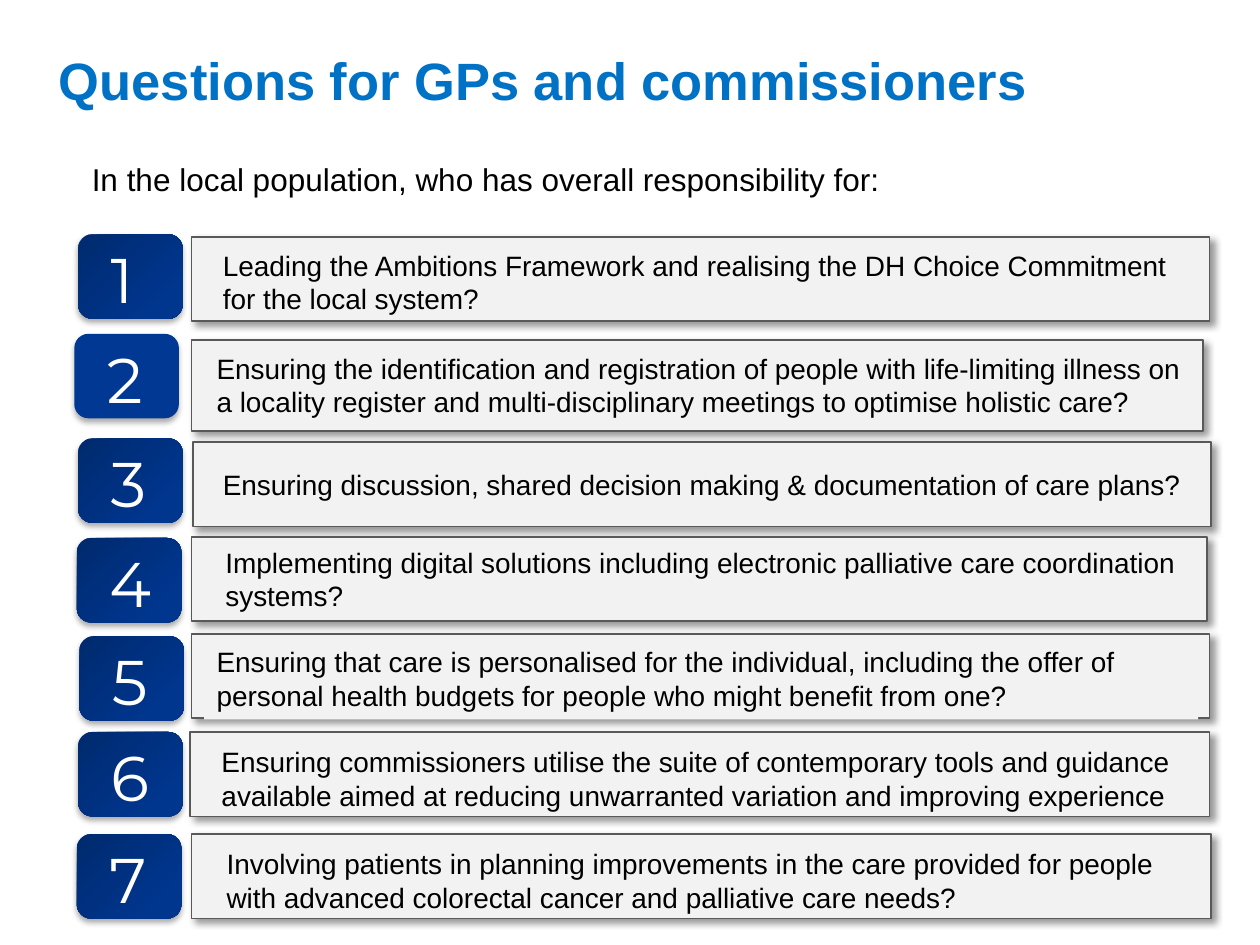
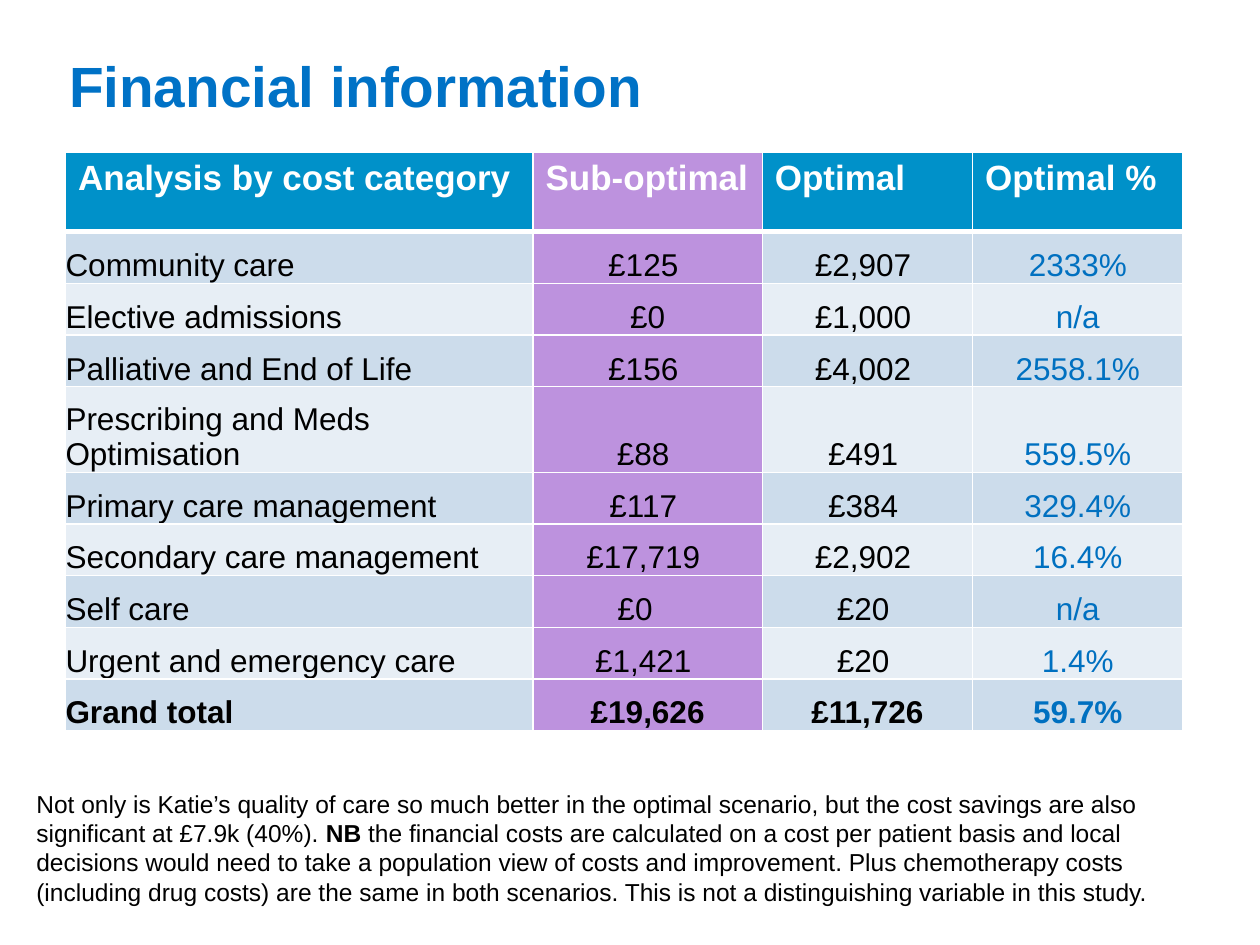
import pptx
import pptx.dml.color
import pptx.enum.shapes
import pptx.enum.text
import pptx.oxml
import pptx.oxml.ns
import pptx.util

Inches = pptx.util.Inches
Pt = pptx.util.Pt
RGBColor = pptx.dml.color.RGBColor
Shapes = pptx.enum.shapes.MSO_SHAPE
Anchor = pptx.enum.text.MSO_ANCHOR
Align = pptx.enum.text.PP_ALIGN
AutoSize = pptx.enum.text.MSO_AUTO_SIZE
qn = pptx.oxml.ns.qn

BLACK = RGBColor(0x00, 0x00, 0x00)
WHITE = RGBColor(0xFF, 0xFF, 0xFF)
TITLE_BLUE = RGBColor(0x00, 0x72, 0xC6)
PERCENT_BLUE = RGBColor(0x00, 0x70, 0xC0)
BADGE_BLUE = RGBColor(0x00, 0x38, 0x93)
BADGE_DARK = RGBColor(0x00, 0x2A, 0x6E)
BADGE_LIGHT = RGBColor(0x00, 0x36, 0x8E)
PANEL_GREY = RGBColor(0xF2, 0xF2, 0xF2)
PANEL_EDGE = RGBColor(0x59, 0x59, 0x59)
HEADER_BLUE = RGBColor(0x00, 0x91, 0xC9)
PURPLE = RGBColor(0xBD, 0x92, 0xDE)
BANDS = (RGBColor(0xCC, 0xDC, 0xEB), RGBColor(0xE7, 0xEE, 0xF5))

BADGE_SHADOW = (32, 3.5, 2.2, 90)
PANEL_SHADOW = (40, 4, 3, 45)

# number: badge place, panel place, text place, opaque text box, question
QUESTIONS = [
    ((0.62, 1.86), (1.52, 1.88, 8.08, 0.67), (1.67, 1.92, 7.83, 0.64), False,
     "Leading the Ambitions Framework and realising the DH Choice Commitment "
     "for the local system?"),
    ((0.59, 2.65), (1.52, 2.7, 8.03, 0.72), (1.62, 2.74, 7.89, 0.64), True,
     "Ensuring the identification and registration of people with life-limiting illness "
     "on a locality register and multi-disciplinary meetings to optimise holistic care?"),
    ((0.62, 3.48), (1.53, 3.51, 8.08, 0.67), (1.67, 3.66, 7.83, 0.37), True,
     "Ensuring discussion, shared decision making & documentation of care plans?"),
    ((0.61, 4.27), (1.52, 4.26, 8.06, 0.67), (1.69, 4.28, 7.95, 0.64), False,
     "Implementing digital solutions including electronic palliative care coordination "
     "systems?"),
    ((0.63, 5.05), (1.52, 5.03, 8.08, 0.67), (1.62, 5.07, 7.89, 0.64), True,
     "Ensuring that care is personalised for the individual, including the offer of "
     "personal health budgets for people who might benefit from one?"),
    ((0.62, 5.81), (1.51, 5.81, 8.09, 0.67), (1.66, 5.86, 7.87, 0.91), False,
     "Ensuring commissioners utilise the suite of contemporary tools and guidance "
     "available aimed at reducing unwarranted variation and improving experience"),
    ((0.61, 6.62), (1.52, 6.62, 8.09, 0.67), (1.7, 6.67, 7.87, 0.64), False,
     "Involving patients in planning improvements in the care provided for people "
     "with advanced colorectal cancer and palliative care needs?"),
]

COSTS = [
    ("Analysis by cost category", "Sub-optimal", "Optimal", "Optimal %"),
    ("Community care", "£125 ", "£2,907 ", "2333%"),
    ("Elective admissions", "£0", "£1,000 ", "n/a"),
    ("Palliative and End of Life", "£156 ", "£4,002 ", "2558.1%"),
    ("Prescribing and Meds Optimisation", "£88 ", "£491 ", "559.5%"),
    ("Primary care management", "£117 ", "£384 ", "329.4%"),
    ("Secondary care management", "£17,719 ", "£2,902 ", "16.4%"),
    ("Self care", "£0", "£20 ", "n/a"),
    ("Urgent and emergency care", "£1,421 ", "£20 ", "1.4%"),
    ("Grand total", "£19,626", "£11,726", "59.7%"),
]
COLUMN_WIDTHS = (3.71, 1.82, 1.67, 1.67)
ROW_HEIGHTS = [0.63] + [0.41] * 3 + [0.68] + [0.41] * 5

NOTE = [
    ("Not only is Katie’s quality of care so much better in the optimal scenario, but the "
     "cost savings are also significant at £7.9k (40%). ", False),
    ("NB ", True),
    ("the financial costs are calculated on a cost per patient basis and local decisions "
     "would need to take a population view of costs and improvement. Plus chemotherapy "
     "costs (including drug costs) are the same in both scenarios. This is not a "
     "distinguishing variable in this study.", False),
]


class Painter:
    """Holds the deck style and the current slide, and draws each kind of element."""

    def __init__(self, deck):
        self.deck = deck
        self.page = None

    def new_page(self, title, place, size):
        self.page = self.deck.slides.add_slide(self.deck.slide_layouts[6])
        box = self.text(place, [(title, True)], size, TITLE_BLUE)
        box.text_frame.auto_size = AutoSize.NONE
        box.text_frame.vertical_anchor = Anchor.MIDDLE

    def style(self, span, size, color, bold=False, font="Arial"):
        span.font.name = font
        span.font.size = Pt(size)
        span.font.bold = bold
        span.font.color.rgb = color

    def text(self, place, spans, size, color=BLACK, font="Arial", wrap=True, fill=None):
        box = self.page.shapes.add_textbox(*map(Inches, place))
        frame = box.text_frame
        frame.word_wrap = wrap
        frame.auto_size = AutoSize.SHAPE_TO_FIT_TEXT
        if fill is not None:
            box.fill.solid()
            box.fill.fore_color.rgb = fill
        for words, bold in spans:
            span = frame.paragraphs[0].add_run()
            span.text = words
            self.style(span, size, color, bold, font)
        return box

    def shadowed(self, kind, place, shadow):
        shape = self.page.shapes.add_shape(kind, *map(Inches, place))
        shape.shadow.inherit = False
        opacity, blur, distance, angle = shadow
        effects = shape._element.spPr.find(qn("a:effectLst"))
        effects.append(pptx.oxml.parse_xml(
            f'<a:outerShdw {pptx.oxml.ns.nsdecls("a")} blurRad="{Pt(blur)}" '
            f'dist="{Pt(distance)}" dir="{angle * 60000}" algn="t" rotWithShape="0">'
            f'<a:srgbClr val="{BLACK}"><a:alpha val="{opacity * 1000}"/></a:srgbClr>'
            '</a:outerShdw>'))
        return shape

    def badge(self, place, number, flat, text_width):
        left, top = place
        shape = self.shadowed(Shapes.ROUNDED_RECTANGLE, (left, top, 0.83, 0.67), BADGE_SHADOW)
        shape.line.fill.background()
        if flat:
            shape.fill.solid()
            shape.fill.fore_color.rgb = BADGE_BLUE
        else:
            shape.fill.gradient()
            shape.fill.gradient_angle = 315
            stops = zip(shape.fill.gradient_stops, (BADGE_DARK, BADGE_LIGHT), (0, 0.8))
            for stop, color, position in stops:
                stop.color.rgb = color
                stop.position = position
        self.text((left + 0.16, top, text_width, 0.71), [(str(number), False)], 36, WHITE,
                  "Montserrat", wrap=False)

    def panel(self, place):
        shape = self.shadowed(Shapes.RECTANGLE, place, PANEL_SHADOW)
        shape.fill.solid()
        shape.fill.fore_color.rgb = PANEL_GREY
        shape.line.color.rgb = PANEL_EDGE
        shape.line.width = Pt(1)

    def cell(self, cell, words, row, column):
        header, total = row == 0, row == len(COSTS) - 1
        widths = {"L": 1, "R": 1, "T": 3 if row == 1 else 1, "B": 3 if header else 1}
        properties = cell._tc.get_or_add_tcPr()
        for side, width in widths.items():
            properties.append(pptx.oxml.parse_xml(
                f'<a:ln{side} {pptx.oxml.ns.nsdecls("a")} w="{Pt(width)}"><a:solidFill>'
                f'<a:srgbClr val="{WHITE}"/></a:solidFill></a:ln{side}>'))
        cell.fill.solid()
        band = HEADER_BLUE if header else BANDS[(row - 1) % 2]
        cell.fill.fore_color.rgb = PURPLE if column == 1 else band
        cell.text_frame.text = words
        para = cell.text_frame.paragraphs[0]
        if header:
            self.style(para.runs[0], 20, WHITE, True)
            return
        cell.vertical_anchor = Anchor.BOTTOM
        cell.margin_left = cell.margin_right = cell.margin_top = cell.margin_bottom = 0
        if column > 0:
            para.alignment = Align.CENTER
        self.style(para.runs[0], 18, PERCENT_BLUE if column == 3 else BLACK, total)

    def table(self, left, top):
        place = (left, top, sum(COLUMN_WIDTHS), sum(ROW_HEIGHTS))
        frame = self.page.shapes.add_table(len(COSTS), len(COLUMN_WIDTHS), *map(Inches, place))
        grid = frame.table
        grid.horz_banding = False
        for column, width in zip(grid.columns, COLUMN_WIDTHS):
            column.width = Inches(width)
        for row, height in zip(grid.rows, ROW_HEIGHTS):
            row.height = Inches(height)
        for row, record in enumerate(COSTS):
            for column, words in enumerate(record):
                self.cell(grid.cell(row, column), words, row, column)
        grid.cell(7, 1).margin_right = Inches(0.2)


def main():
    deck = pptx.Presentation()
    deck.slide_width = Inches(10)
    deck.slide_height = Inches(7.5)
    painter = Painter(deck)

    painter.new_page("Questions for GPs and commissioners", (0.37, 0.27, 8.57, 0.73), 30)
    painter.text((0.63, 1.22, 7.49, 0.4),
                 [("In the local population, who has overall responsibility for:", False)], 18)
    for number, (badge, panel, place, opaque, question) in enumerate(QUESTIONS, 1):
        painter.badge(badge, number, number == 2, 0.54 if number > 5 else 0.48)
        painter.panel(panel)
        painter.text(place, [(question, False)], 16, fill=PANEL_GREY if opaque else None)

    painter.new_page("Financial information", (0.45, 0.4, 8.05, 0.55), 32.4)
    painter.table(0.52, 1.21)
    painter.text((0.19, 6.21, 9.64, 1.04), NOTE, 14)
    deck.save("out.pptx")


if __name__ == "__main__":
    main()
